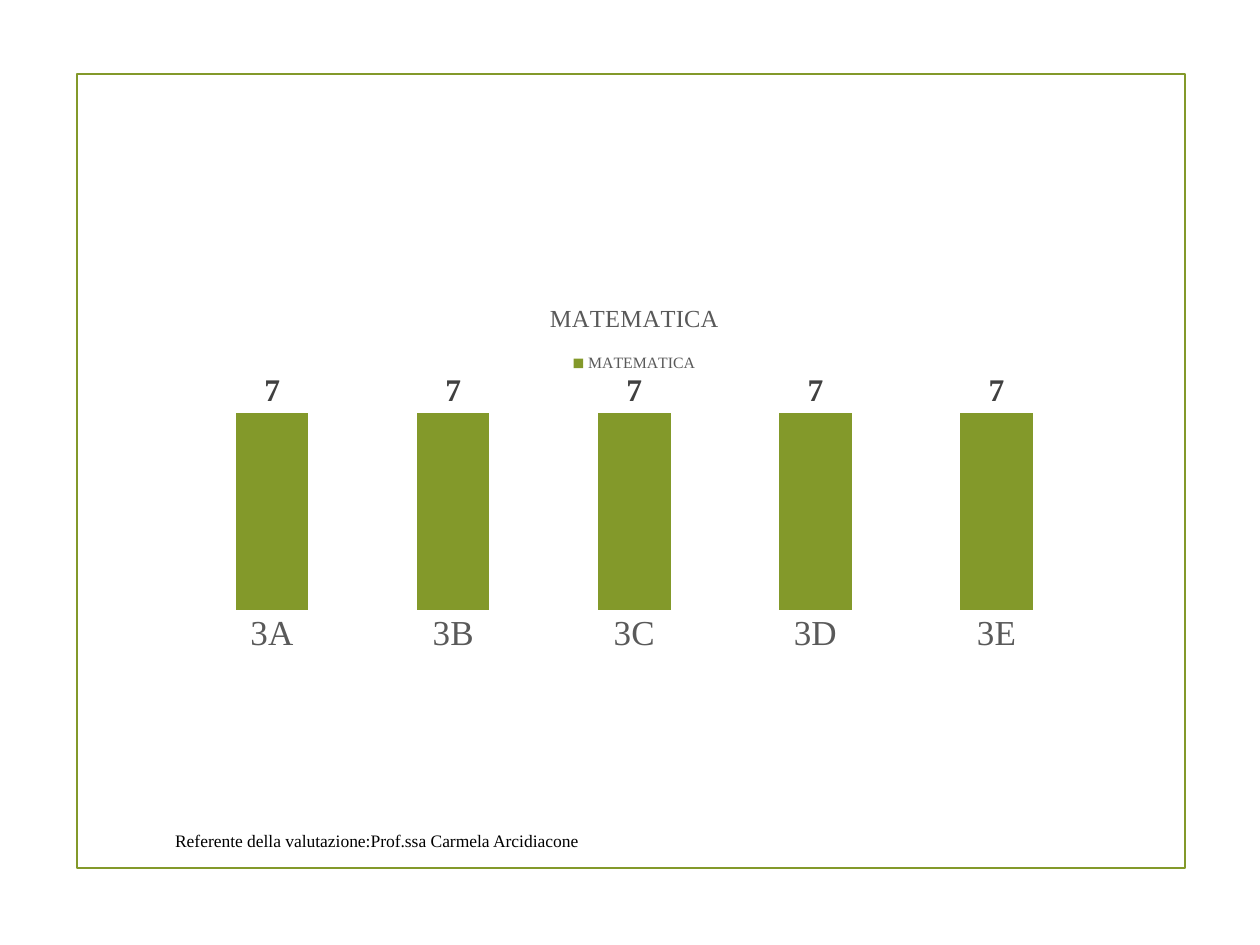
"""Builds the slide with the mathematics results of the third-year classes."""
from dataclasses import dataclass

from pptx import Presentation
from pptx.chart.data import CategoryChartData
from pptx.dml.color import RGBColor
from pptx.enum.chart import XL_CHART_TYPE, XL_LABEL_POSITION, XL_LEGEND_POSITION, XL_TICK_MARK
from pptx.enum.shapes import MSO_SHAPE
from pptx.enum.text import MSO_ANCHOR
from pptx.util import Pt

COLUMN = XL_CHART_TYPE.COLUMN_CLUSTERED
OUTSIDE_END = XL_LABEL_POSITION.OUTSIDE_END
TOP = XL_LEGEND_POSITION.TOP
NO_TICK = XL_TICK_MARK.NONE
RECTANGLE = MSO_SHAPE.RECTANGLE
MIDDLE = MSO_ANCHOR.MIDDLE
BLANK_LAYOUT = 6


@dataclass(frozen=True)
class Theme:
    font: str = "Times New Roman"
    green: str = "83992A"
    black: str = "000000"
    grey: str = "595959"
    dark: str = "404040"
    small: int = 10
    legend: int = 9
    title: int = 14
    value: int = 18
    category: int = 20
    border: float = 1.25


class SlideBuilder:
    def __init__(self, slide, theme):
        self.slide = slide
        self.theme = theme

    def style(self, font, size, color, bold=False):
        font.name = self.theme.font
        font.size = Pt(size)
        font.bold = bold
        font.color.rgb = RGBColor.from_string(color)

    def frame(self, *box):
        sp = self.slide.shapes.add_shape(RECTANGLE, *map(Pt, box))
        sp.shadow.inherit = False
        sp.fill.background()
        sp.line.color.rgb = RGBColor.from_string(self.theme.green)
        sp.line.width = Pt(self.theme.border)

    def text(self, text, *box):
        tf = self.slide.shapes.add_textbox(*map(Pt, box)).text_frame
        tf.word_wrap = True
        tf.vertical_anchor = MIDDLE
        p = tf.paragraphs[0]
        p.text = text
        self.style(p.font, self.theme.small, self.theme.black)

    def column_chart(self, name, categories, values, *box):
        t = self.theme
        data = CategoryChartData()
        data.categories = categories
        data.add_series(name, values)
        chart = self.slide.shapes.add_chart(COLUMN, *map(Pt, box), data).chart
        self.style(chart.font, t.small, t.black)

        chart.has_title = True
        p = chart.chart_title.text_frame.paragraphs[0]
        p.text = name
        self.style(p.font, t.title, t.grey)

        chart.has_legend = True
        chart.legend.position = TOP
        chart.legend.include_in_layout = False
        self.style(chart.legend.font, t.legend, t.grey)

        axis = chart.category_axis
        axis.major_tick_mark = axis.minor_tick_mark = NO_TICK
        axis.format.line.fill.background()
        self.style(axis.tick_labels.font, t.category, t.grey)

        axis = chart.value_axis
        axis.visible = False
        axis.has_major_gridlines = False
        axis.minimum_scale, axis.maximum_scale = 0, 8

        plot = chart.plots[0]
        plot.gap_width = 150
        plot.vary_by_categories = False
        fill = plot.series[0].format.fill
        fill.solid()
        fill.fore_color.rgb = RGBColor.from_string(t.green)
        plot.has_data_labels = True
        labels = plot.data_labels
        labels.show_value = True
        labels.position = OUTSIDE_END
        self.style(labels.font, t.value, t.dark, bold=True)


def main():
    prs = Presentation()
    prs.slide_width, prs.slide_height = Pt(720), Pt(540)
    s = SlideBuilder(prs.slides.add_slide(prs.slide_layouts[BLANK_LAYOUT]), Theme())
    s.frame(44, 42.5, 633, 453.5)
    s.text("Referente della valutazione:Prof.ssa Carmela Arcidiacone", 93, 469.5, 402, 22)
    s.column_chart("MATEMATICA", ["3A", "3B", "3C", "3D", "3E"], [7] * 5, 93, 162, 539, 216)
    prs.save("out.pptx")


if __name__ == "__main__":
    main()
